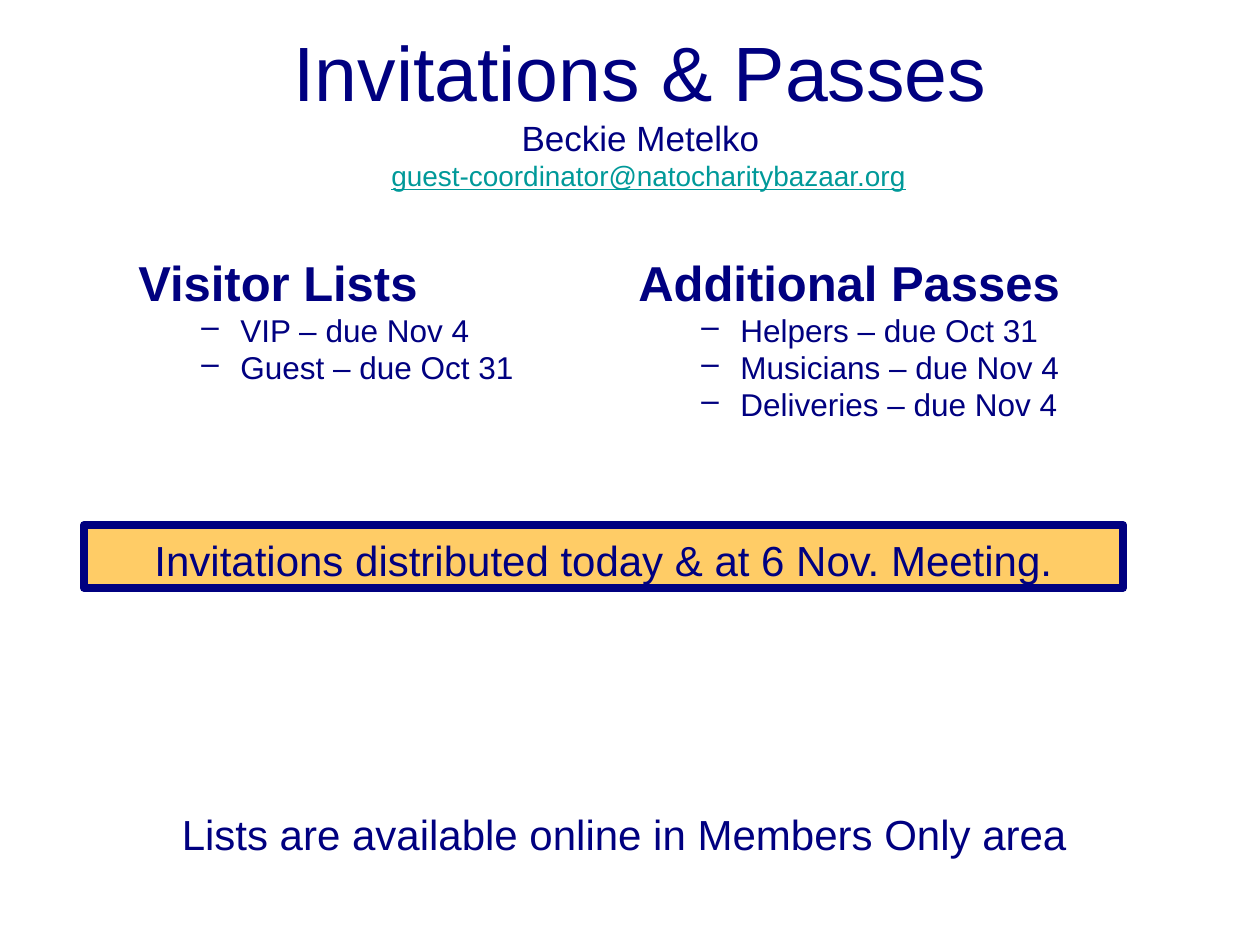
from dataclasses import dataclass

from lxml.etree import SubElement
from pptx import Presentation
from pptx.dml.color import RGBColor
from pptx.enum.shapes import MSO_SHAPE
from pptx.enum.text import MSO_ANCHOR, PP_ALIGN
from pptx.oxml.ns import qn
from pptx.util import Emu, Pt


@dataclass(frozen=True)
class Theme:
    font: str = "Arial"
    navy: RGBColor = RGBColor(0x00, 0x00, 0x80)
    teal: RGBColor = RGBColor(0x00, 0x99, 0x99)
    amber: RGBColor = RGBColor(0xFF, 0xCC, 0x66)
    white: RGBColor = RGBColor(0xFF, 0xFF, 0xFF)
    title: int = 44
    heading: int = 28
    message: int = 24
    name: int = 20
    item: int = 18
    address: int = 16


def px(length):
    return Emu(round(length * 914400 / 126))


class SlideBuilder:
    def __init__(self, presentation, theme):
        self.theme = theme
        self.slide = presentation.slides.add_slide(presentation.slide_layouts[6])

    def add_text(self, paragraph, text, size, spacing, **font_values):
        run = paragraph.add_run()
        run.text = text
        color = font_values.pop("color", self.theme.navy)
        for name, value in {"name": self.theme.font, "size": Pt(size), **font_values}.items():
            setattr(run.font, name, value)
        run.font.color.rgb = color
        for name, value in spacing.items():
            setattr(paragraph, name, value)

    def text_frame(self, left, top, width, height, anchor=MSO_ANCHOR.TOP):
        box = self.slide.shapes.add_textbox(*map(px, (left, top, width, height)))
        frame = box.text_frame
        frame.word_wrap = True
        frame.vertical_anchor = anchor
        return frame

    def title_block(self, bounds, title, name, address):
        theme = self.theme
        frame = self.text_frame(*bounds, anchor=MSO_ANCHOR.MIDDLE)
        centered = {"alignment": PP_ALIGN.CENTER}
        self.add_text(frame.paragraphs[0], title, theme.title, centered)
        self.add_text(frame.add_paragraph(), name, theme.name, centered)
        paragraph = frame.add_paragraph()
        paragraph._p.get_or_add_pPr().set("marL", str(px(16)))
        self.add_text(paragraph, address, theme.address, centered,
                      color=theme.teal, underline=True)

    def deadline_list(self, bounds, heading, items):
        frame = self.text_frame(*bounds)
        self.add_text(frame.paragraphs[0], heading, self.theme.heading,
                      {"line_spacing": 0.8}, bold=True)
        for item in items:
            paragraph = frame.add_paragraph()
            properties = paragraph._p.get_or_add_pPr()
            for name, length in {"marL": 102, "indent": -39}.items():
                properties.set(name, str(px(length)))
            SubElement(properties, qn("a:buChar")).set("char", "–")
            self.add_text(paragraph, item, self.theme.item,
                          {"line_spacing": 0.8, "space_before": Pt(4)})

    def message(self, bounds, text, fill, line_width=0):
        shape = self.slide.shapes.add_shape(MSO_SHAPE.RECTANGLE, *map(px, bounds))
        shape.shadow.inherit = False
        shape.fill.solid()
        shape.fill.fore_color.rgb = fill
        if line_width:
            shape.line.color.rgb = self.theme.navy
            shape.line.width = Pt(line_width)
        else:
            shape.line.fill.background()
        frame = shape.text_frame
        for name, value in {"word_wrap": True, "vertical_anchor": MSO_ANCHOR.TOP,
                            "margin_top": px(10)}.items():
            setattr(frame, name, value)
        self.add_text(frame.paragraphs[0], text, self.theme.message,
                      {"alignment": PP_ALIGN.CENTER})


def main():
    theme = Theme()
    presentation = Presentation()
    presentation.slide_width = px(1260)
    presentation.slide_height = px(945)
    builder = SlideBuilder(presentation, theme)
    builder.title_block((105, 29, 1071, 158), "Invitations & Passes",
                        "Beckie Metelko", "guest-coordinator@natocharitybazaar.org")
    builder.deadline_list((126, 258, 494, 256), "Visitor Lists",
                          ["VIP – due Nov 4", "Guest – due Oct 31"])
    builder.deadline_list((626, 258, 634, 246), "Additional Passes",
                          ["Helpers – due Oct 31", "Musicians – due Nov 4",
                           "Deliveries – due Nov 4"])
    builder.message((84, 525, 1039, 63),
                    "Invitations distributed today & at 6 Nov. Meeting.",
                    theme.amber, line_width=4.5)
    builder.message((0, 798, 1260, 115),
                    "Lists are available online in Members Only area ", theme.white)
    presentation.save("out.pptx")


if __name__ == "__main__":
    main()
